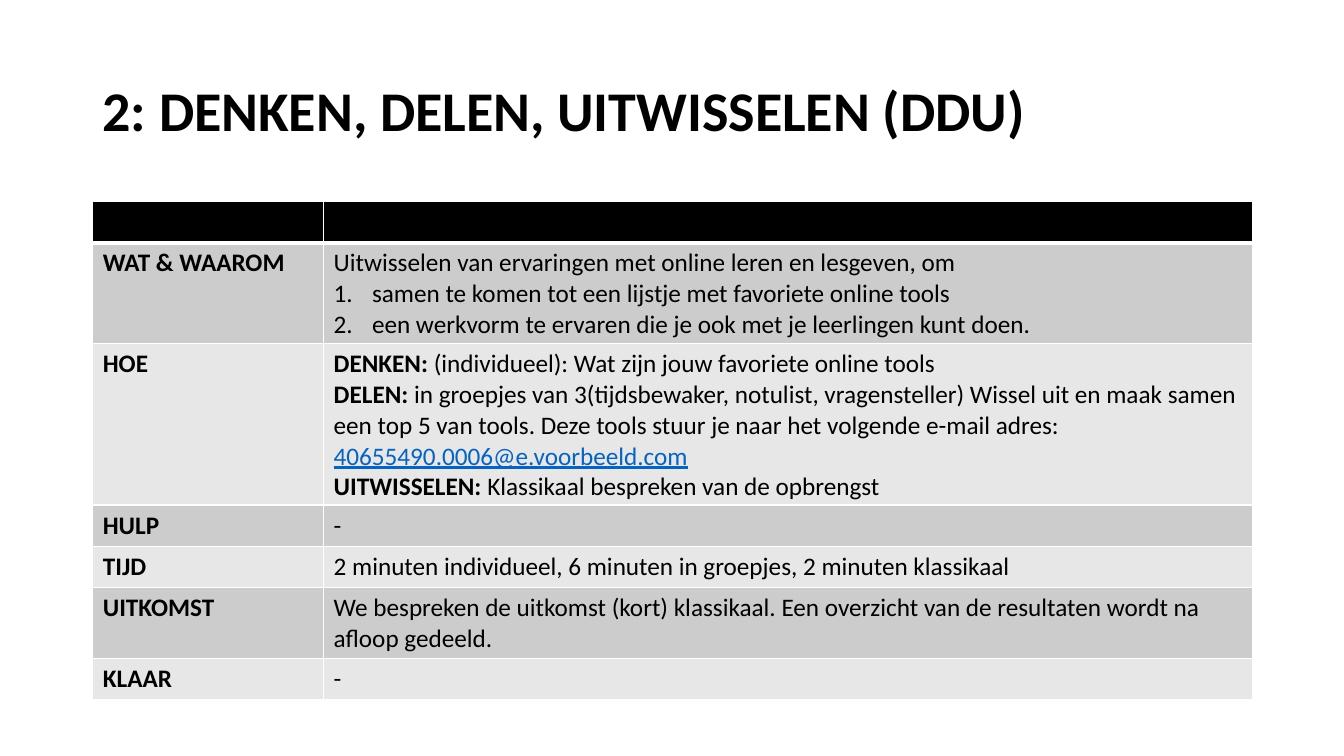
import pptx
import pptx.dml.color
import pptx.enum.text
import pptx.oxml.ns
import pptx.util
from lxml import etree

Inches = pptx.util.Inches
RGBColor = pptx.dml.color.RGBColor

BLACK = RGBColor(0x00, 0x00, 0x00)
WHITE = RGBColor(0xFF, 0xFF, 0xFF)
DARK_BAND = RGBColor(0xCC, 0xCC, 0xCC)
LIGHT_BAND = RGBColor(0xE7, 0xE7, 0xE7)
LINK_BLUE = RGBColor(0x05, 0x63, 0xC1)
FONT = "Calibri"

# Run styles and the paragraph mark for numbered lines
PLAIN, BOLD, LINK = "plain", "bold", "link"
NUMBERED = "numbered"

# Each row: label, then paragraphs as (kind, runs)
ROWS = [
    ("WAT & WAAROM", [
        (PLAIN, [("Uitwisselen van ervaringen met online leren en lesgeven, om", PLAIN)]),
        (NUMBERED, [("samen te komen tot een lijstje met favoriete online tools", PLAIN)]),
        (NUMBERED, [("een werkvorm te ervaren die je ook met je leerlingen kunt doen.", PLAIN)]),
    ]),
    ("HOE", [
        (PLAIN, [("DENKEN: ", BOLD),
                 ("(individueel): Wat zijn jouw favoriete online tools", PLAIN)]),
        (PLAIN, [("DELEN: ", BOLD),
                 ("in groepjes van 3(tijdsbewaker, notulist, vragensteller) Wissel uit en maak "
                  "samen een top 5 van tools. Deze tools stuur je naar het volgende e-mail "
                  "adres: ", PLAIN),
                 ("40655490.0006@e.voorbeeld.com", LINK)]),
        (PLAIN, [("UITWISSELEN: ", BOLD),
                 ("Klassikaal bespreken van de opbrengst", PLAIN)]),
    ]),
    ("HULP", [(PLAIN, [("-", PLAIN)])]),
    ("TIJD", [(PLAIN, [("2 minuten individueel, 6 minuten in groepjes, 2 minuten klassikaal",
                        PLAIN)])]),
    ("UITKOMST", [(PLAIN, [("We bespreken de uitkomst (kort) klassikaal. Een overzicht van de "
                            "resultaten wordt na afloop gedeeld.", PLAIN)])]),
    ("KLAAR", [(PLAIN, [("-", PLAIN)])]),
]


def set_font(font, size, bold=None):
    font.name = FONT
    font.size = pptx.util.Pt(size)
    font.color.rgb = BLACK
    font.bold = bold


def add_title(slide, left, top, width, height):
    box = slide.shapes.add_textbox(left, top, width, height)
    frame = box.text_frame
    frame.word_wrap = True
    frame.vertical_anchor = pptx.enum.text.MSO_ANCHOR.MIDDLE
    paragraph = frame.paragraphs[0]
    paragraph.text = "2: DENKEN, DELEN, UITWISSELEN (DDU)"
    paragraph.line_spacing = 0.9
    set_font(paragraph.font, 40, True)


def number_paragraph(paragraph):
    properties = paragraph._p.get_or_add_pPr()
    properties.set("marL", str(Inches(0.38)))
    properties.set("indent", str(-Inches(0.38)))
    numbering = etree.Element(pptx.oxml.ns.qn("a:buAutoNum"), type="arabicPeriod")
    properties.insert_element_before(numbering, "a:tabLst", "a:defRPr", "a:extLst")


def style_cell(cell, fill, bottom_width=1):
    # Borders come before the fill in the cell properties
    properties = cell._tc.get_or_add_tcPr()
    for side in ("lnL", "lnR", "lnT", "lnB"):
        width = bottom_width if side == "lnB" else 1
        line = etree.SubElement(properties, pptx.oxml.ns.qn("a:" + side),
                                w=str(pptx.util.Pt(width)))
        solid = etree.SubElement(line, pptx.oxml.ns.qn("a:solidFill"))
        etree.SubElement(solid, pptx.oxml.ns.qn("a:srgbClr"), val=str(WHITE))
    cell.fill.solid()
    cell.fill.fore_color.rgb = fill


def write_cell(cell, paragraphs):
    frame = cell.text_frame
    for index, (kind, runs) in enumerate(paragraphs):
        paragraph = frame.add_paragraph() if index else frame.paragraphs[0]
        set_font(paragraph.font, 18)
        if kind == NUMBERED:
            number_paragraph(paragraph)
        for text, style in runs:
            run = paragraph.add_run()
            run.text = text
            run.font.bold = style == BOLD
            if style == LINK:
                run.font.underline = True
            run.font.color.rgb = LINK_BLUE if style == LINK else BLACK


def add_activity_table(slide, left, top, width, row_height):
    row_count = len(ROWS) + 1
    frame = slide.shapes.add_table(row_count, 2, left, top, width, row_height * row_count)
    table = frame.table
    table.horz_banding = False
    label_width = Inches(2.29)
    table.columns[0].width = label_width
    table.columns[1].width = width - label_width

    # Empty black header
    for cell in table.rows[0].cells:
        style_cell(cell, BLACK, bottom_width=3)

    # Labelled rows in alternating greys
    for number, (label, paragraphs) in enumerate(ROWS, start=1):
        label_cell, text_cell = table.rows[number].cells
        fill = DARK_BAND if number % 2 else LIGHT_BAND
        style_cell(label_cell, fill)
        style_cell(text_cell, fill)
        write_cell(label_cell, [(PLAIN, [(label, BOLD)])])
        write_cell(text_cell, paragraphs)


def main():
    presentation = pptx.Presentation()
    presentation.slide_width = Inches(13.33)
    presentation.slide_height = Inches(7.5)
    slide = presentation.slides.add_slide(presentation.slide_layouts[6])
    left, width = Inches(0.92), Inches(11.5)
    add_title(slide, left, Inches(0.4), width, Inches(1.45))
    add_activity_table(slide, left, Inches(2), width, Inches(0.41))
    presentation.save("out.pptx")


if __name__ == "__main__":
    main()
